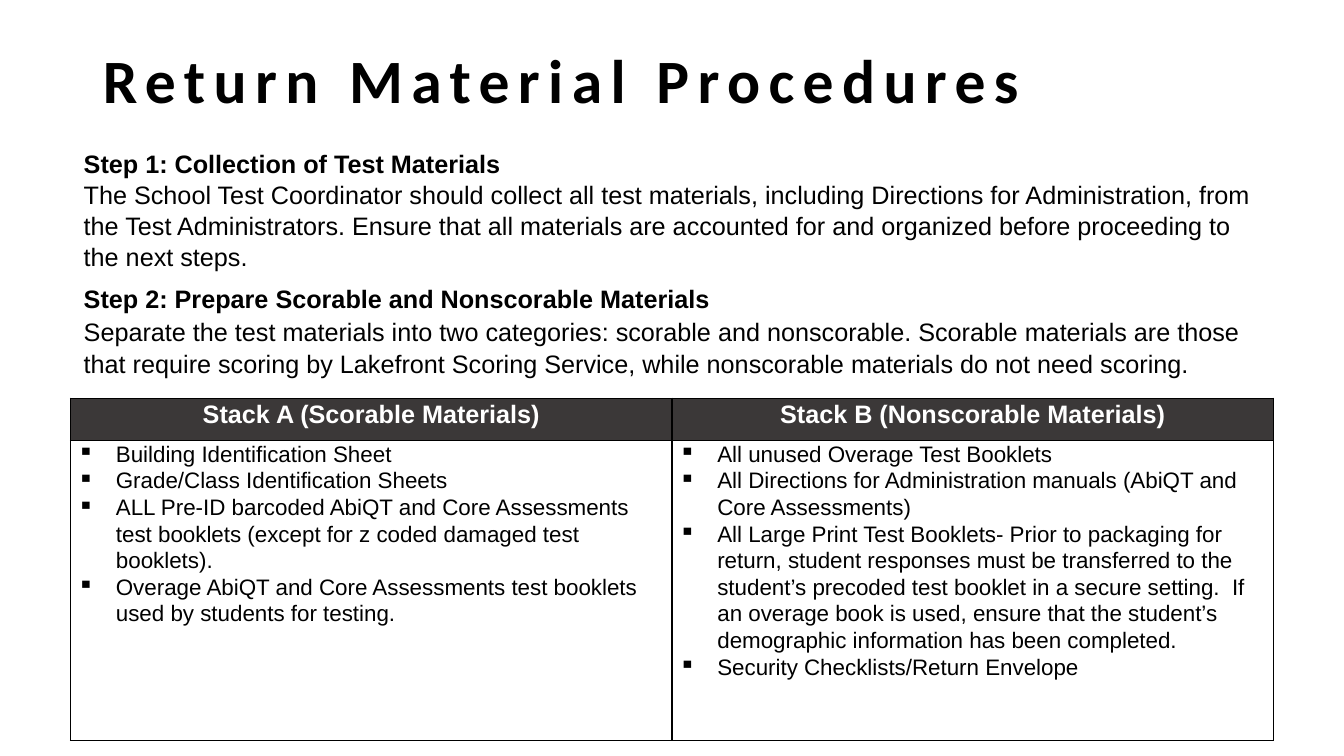
from dataclasses import dataclass
from lxml.etree import SubElement
from pptx import Presentation
from pptx.dml.color import RGBColor
from pptx.enum.text import MSO_ANCHOR, MSO_AUTO_SIZE, PP_ALIGN
from pptx.oxml.ns import qn
from pptx.util import Inches, Pt


@dataclass(frozen=True)
class Theme:
    ink: str = "000000"
    paper: str = "FFFFFF"
    band: str = "3B3838"
    head: str = "Calibri"
    text: str = "Arial"
    title: int = 44
    body: int = 18
    item: int = 16


THEME = Theme()
WIDE, HIGH = Inches(13.33), Inches(7.5)

STEPS = [
    ("Step 1: Collection of Test Materials",
     "The School Test Coordinator should collect all test materials, including "
     "Directions for Administration, from the Test Administrators. Ensure that all "
     "materials are accounted for and organized before proceeding to the next steps.",
     1.02, 7.2),
    ("Step 2: Prepare Scorable and Nonscorable Materials",
     "Separate the test materials into two categories: scorable and nonscorable. "
     "Scorable materials are those that require scoring by Lakefront Scoring Service, "
     "while nonscorable materials do not need scoring.",
     1.07, 8),
]

STACKS = {
    "Stack A (Scorable Materials)": [
        "Building Identification Sheet",
        "Grade/Class Identification Sheets",
        "ALL Pre-ID barcoded AbiQT and Core Assessments test booklets "
        "(except for z coded damaged test booklets).",
        "Overage AbiQT and Core Assessments test booklets used by students for testing.",
    ],
    "Stack B (Nonscorable Materials)": [
        "All unused Overage Test Booklets",
        "All Directions for Administration manuals (AbiQT and Core Assessments)",
        "All Large Print Test Booklets- Prior to packaging for return, student responses "
        "must be transferred to the student’s precoded test booklet in a secure setting.  "
        "If an overage book is used, ensure that the student’s demographic information "
        "has been completed.",
        "Security Checklists/Return Envelope",
    ],
}


def across(share):
    return round(WIDE * share / 100)


def down(share):
    return round(HIGH * share / 100)


def area(left, top, width, height):
    return across(left), down(top), across(width), down(height)


def place(shape, box):
    shape.left, shape.top, shape.width, shape.height = box


def indent(para, left, first, bullet=None):
    props = para._p.get_or_add_pPr()
    props.set("marL", str(Inches(left)))
    props.set("indent", str(Inches(first)))
    if bullet:
        SubElement(props, qn("a:buChar")).set("char", bullet)
    else:
        SubElement(props, qn("a:buNone"))


def space(para, lines, after=0):
    para.line_spacing = lines
    para.space_before = Pt(0)
    para.space_after = Pt(after)


def write(para, text, size, color=THEME.ink, bold=False, face=THEME.text):
    run = para.add_run()
    run.text = text
    font = run.font
    font.name, font.size, font.bold = face, Pt(size), bold
    font.color.rgb = RGBColor.from_string(color)
    return run


def paras(frame, count):
    return [frame.paragraphs[0]] + [frame.add_paragraph() for _ in range(count - 1)]


def add_title(slide):
    shape = slide.shapes.title
    place(shape, area(6.9, 5.33, 86.27, 11.33))
    frame = shape.text_frame
    frame.auto_size = MSO_AUTO_SIZE.NONE
    frame.vertical_anchor = MSO_ANCHOR.MIDDLE
    para = frame.paragraphs[0]
    para.alignment = PP_ALIGN.LEFT
    space(para, 0.9)
    run = write(para, "Return Material Procedures", THEME.title, bold=True, face=THEME.head)
    run.font._element.set("spc", "600")


def add_steps(slide):
    shape = slide.placeholders[1]
    place(shape, area(5.03, 18.93, 89.72, 31.87))
    frame = shape.text_frame
    frame.auto_size = MSO_AUTO_SIZE.SHAPE_TO_FIT_TEXT
    lines = iter(paras(frame, 2 * len(STEPS)))
    for head, body, pitch, after in STEPS:
        for text, bold, gap in ((head, True, 0), (body, False, after)):
            para = next(lines)
            indent(para, 0.06, 0)
            space(para, pitch, gap)
            write(para, text, THEME.body, bold=bold)


def frame_cell(cell):
    cell.margin_left = cell.margin_right = Inches(0.07)
    cell.margin_top = cell.margin_bottom = 0
    props = cell._tc.get_or_add_tcPr()
    for side in ("lnL", "lnR", "lnT", "lnB"):
        line = SubElement(props, qn(f"a:{side}"), w=str(Pt(1)))
        fill = SubElement(line, qn("a:solidFill"))
        SubElement(fill, qn("a:srgbClr"), val=THEME.ink)


def add_head(cell, text):
    frame_cell(cell)
    cell.fill.solid()
    cell.fill.fore_color.rgb = RGBColor.from_string(THEME.band)
    para = cell.text_frame.paragraphs[0]
    para.alignment = PP_ALIGN.CENTER
    space(para, 1.07)
    write(para, text, THEME.body, THEME.paper, True)


def add_list(cell, items):
    frame_cell(cell)
    cell.fill.background()
    for para, text in zip(paras(cell.text_frame, len(items)), items):
        indent(para, 0.38, -0.38, "▪")
        space(para, 1.07)
        write(para, text, THEME.item)


def add_stacks(slide):
    box = area(5.25, 52.67, 89.5, 45.33)
    table = slide.shapes.add_table(2, len(STACKS), *box).table
    table.first_row = table.horz_banding = False
    for row, share in zip(table.rows, (5.6, 39.73)):
        row.height = down(share)
    for col, (head, items) in enumerate(STACKS.items()):
        add_head(table.cell(0, col), head)
        add_list(table.cell(1, col), items)


def main():
    deck = Presentation()
    deck.slide_width, deck.slide_height = WIDE, HIGH
    slide = deck.slides.add_slide(deck.slide_layouts[1])
    add_title(slide)
    add_steps(slide)
    add_stacks(slide)
    deck.save("out.pptx")


if __name__ == "__main__":
    main()
